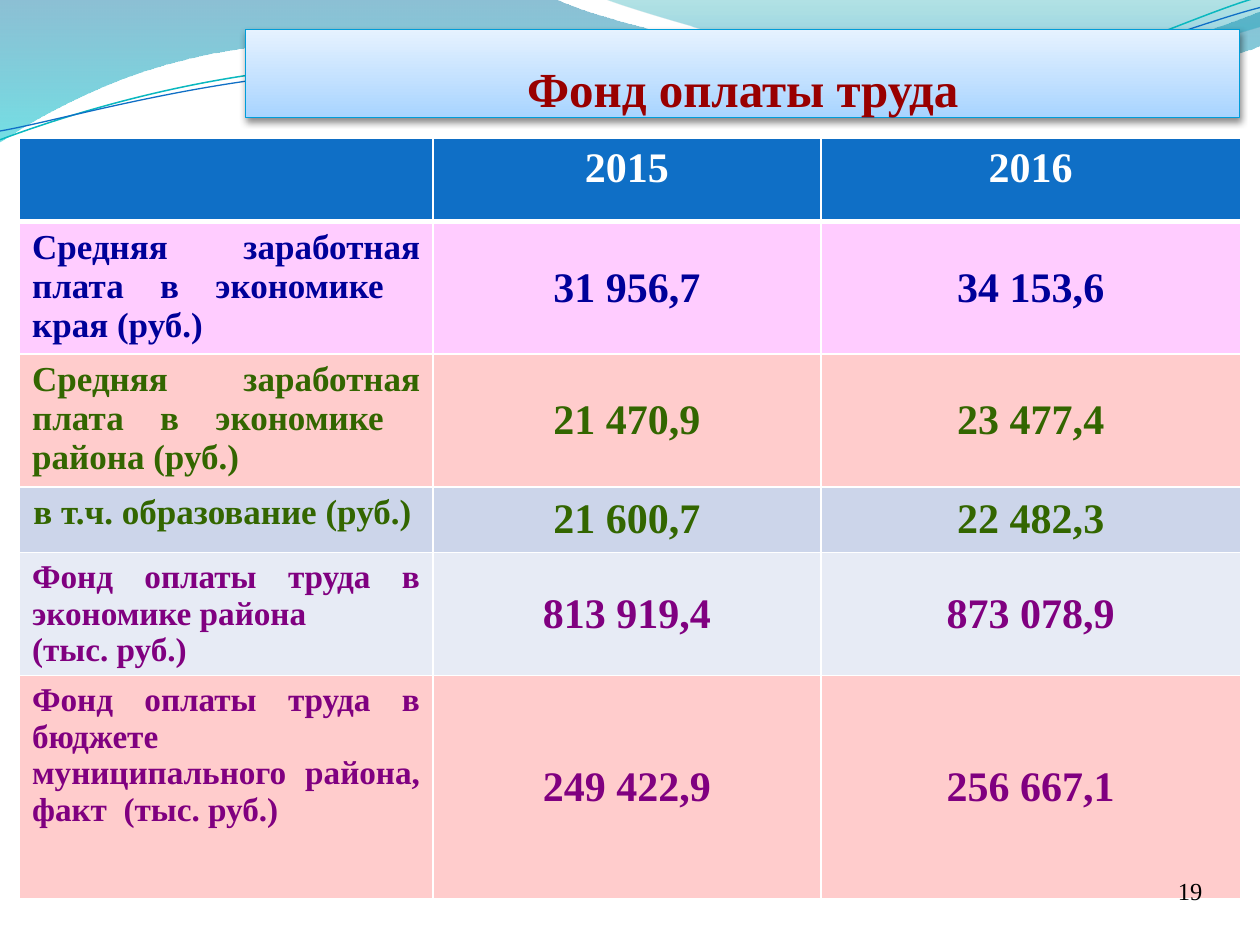
from dataclasses import dataclass

from lxml.etree import SubElement
from pptx import Presentation
from pptx.dml.color import RGBColor
from pptx.enum.text import MSO_ANCHOR as Anchor, PP_ALIGN as Align
from pptx.oxml import parse_xml
from pptx.oxml.ns import nsdecls, qn
from pptx.util import Emu, Inches, Pt


@dataclass(frozen=True)
class Theme:
    font: str = "Times New Roman"
    white: str = "FFFFFF"
    black: str = "000000"
    blue: str = "0F6FC6"
    teal: str = "0AB8BF"
    edge: str = "009DD9"
    red: str = "990000"
    navy: str = "000099"
    green: str = "336600"
    purple: str = "800080"
    lilac: str = "FFCCFF"
    pink: str = "FFCCCC"
    steel: str = "CCD5EA"
    mist: str = "E7EBF5"
    title_size: int = 28
    figure_size: int = 24
    label_size: int = 20
    small_size: int = 19
    number_size: int = 14


THEME = Theme()
COLUMNS, ROWS = 100, 75
COLUMN_WIDTHS = (32.8, 30.8, 33.3)
ROW_HEIGHTS = (6.6, 10.5, 10.55, 5.2, 9.75, 17.75)

UPPER_WAVE = (
    (0, -0.1), ((44, -0.1),),
    ((47.6, 1.7), (66.4, 6.3), (75.8, 6.3)),
    ((85.3, 6.3), (95.8, 2.6), (100, 0.9)),
    ((100.1, 3.6),),
    ((98.3, 4.4), (87, 7.6), (74.6, 7.5)),
    ((62.2, 7.5), (38.2, 2.8), (25.7, 3.4)),
    ((12.9, 3.5), (4.6, 8.3), (-0.1, 11.3)),
)
RIGHT_WAVE = (
    (47.9, -0.1),
    ((50.9, 1.1), (68.2, 6.2), (76.9, 6.5)),
    ((85.6, 6.9), (96.1, 3.2), (100, 2.1)),
    ((100, 0),),
)
TEAL_LINE = (
    (0, 11.1),
    ((4.8, 9.3), (15.8, 5.7), (27.7, 5.2)),
    ((39.5, 4.7), (59.3, 8.9), (71.3, 8)),
    ((83.3, 7.1), (93.8, 1.5), (99.8, -0.2)),
)
BLUE_LINE = (
    (0, 10.4),
    ((4.7, 9.6), (16.4, 6.1), (28.3, 5.6)),
    ((40.3, 5.1), (59.7, 8.3), (71.7, 7.5)),
    ((83.6, 6.7), (94.1, 2.1), (100, 0.6)),
)
ENTRIES = (
    (("Средняя заработная плата в экономике  края (руб.)",),
     "31 956,7", "34 153,6", THEME.lilac, THEME.navy, THEME.label_size, Align.JUSTIFY),
    (("Средняя заработная плата в экономике  района (руб.)",),
     "21 470,9", "23 477,4", THEME.pink, THEME.green, THEME.label_size, Align.JUSTIFY),
    (("в т.ч. образование (руб.) ",),
     "21 600,7", "22 482,3", THEME.steel, THEME.green, THEME.label_size, Align.RIGHT),
    (("Фонд оплаты труда в экономике района", "(тыс. руб.)"),
     "813 919,4", "873 078,9", THEME.mist, THEME.purple, THEME.small_size, Align.JUSTIFY),
    (("Фонд оплаты труда в бюджете муниципального района, факт  (тыс. руб.)",),
     "249 422,9", "256 667,1", THEME.pink, THEME.purple, THEME.small_size, Align.JUSTIFY),
)


def write(frame, *lines, size, color, bold=True, align=Align.LEFT):
    for index, line in enumerate(lines):
        para = frame.add_paragraph() if index else frame.paragraphs[0]
        para.alignment = align
        span = para.add_run()
        span.text = line
        span.font.name = THEME.font
        span.font.size = Pt(size)
        span.font.bold = bold
        span.font.color.rgb = RGBColor.from_string(color)


def bend(shape, segments):
    corners = list(shape._element.iter(qn("a:lnTo")))
    for segment in segments:
        group, corners = corners[:len(segment)], corners[len(segment):]
        if len(group) == 3:
            curve = SubElement(group[0].getparent(), qn("a:cubicBezTo"))
            group[0].addprevious(curve)
            for corner in group:
                curve.append(corner[0])
                corner.getparent().remove(corner)


def shade(shape, *stops):
    shape.fill.background()
    marks = "".join(
        f'<a:gs pos="{place * 1000}"><a:srgbClr val="{color}">'
        f'<a:alpha val="{alpha * 1000}"/></a:srgbClr></a:gs>'
        for place, color, alpha in stops)
    gradient = parse_xml(f'<a:gradFill {nsdecls("a")} rotWithShape="1"><a:gsLst>{marks}'
                         '</a:gsLst><a:lin ang="5400000" scaled="0"/></a:gradFill>')
    properties = shape._element.spPr
    properties.replace(properties.find(qn("a:noFill")), gradient)


def stroke(shape, color, width):
    shape.line.color.rgb = RGBColor.from_string(color)
    shape.line.width = Pt(width)


class Painter:
    def __init__(self, deck, page):
        self.page = page
        self.column = deck.slide_width / COLUMNS
        self.row = deck.slide_height / ROWS

    def area(self, left, top, width, height):
        return (Emu(round(left * self.column)), Emu(round(top * self.row)),
                Emu(round(width * self.column)), Emu(round(height * self.row)))

    def curve(self, outline, close=False):
        start, *segments = outline
        knots = [start] + [knot for segment in segments for knot in segment]
        points = [(round(x * self.column), round(y * self.row)) for x, y in knots]
        builder = self.page.shapes.build_freeform(*points[0])
        builder.add_line_segments(points[1:], close=close)
        shape = builder.convert_to_shape()
        bend(shape, segments)
        shape.shadow.inherit = False
        return shape

    def wave(self, outline, *stops):
        shape = self.curve(outline, close=True)
        shape.line.fill.background()
        shade(shape, *stops)

    def ribbon(self, outline, color, width):
        shape = self.curve(outline)
        shape.fill.background()
        stroke(shape, color, width)

    def title(self, text, *place):
        box = self.page.shapes.title
        box.left, box.top, box.width, box.height = self.area(*place)
        shade(box, (0, "E6F2FF", 100), (100, "A8D4FF", 100))
        stroke(box, THEME.edge, 0.75)
        box._element.spPr.append(parse_xml(
            f'<a:effectLst {nsdecls("a")}><a:outerShdw blurRad="50800" dist="25400" '
            'dir="5400000" rotWithShape="0"><a:srgbClr val="000000"><a:alpha val="45000"/>'
            '</a:srgbClr></a:outerShdw></a:effectLst>'))
        frame = box.text_frame
        frame.vertical_anchor = Anchor.BOTTOM
        frame.margin_left = frame.margin_right = frame.margin_bottom = 0
        write(frame, text, size=THEME.title_size, color=THEME.red, align=Align.CENTER)
        self.page.shapes._spTree.append(box._element)

    def cell(self, cell, fill, base=1):
        properties = cell._tc.get_or_add_tcPr()
        for side, width in (("L", 1), ("R", 1), ("T", 1), ("B", base)):
            properties.append(parse_xml(
                f'<a:ln{side} {nsdecls("a")} w="{Pt(width)}"><a:solidFill>'
                f'<a:srgbClr val="{THEME.white}"/></a:solidFill></a:ln{side}>'))
        cell.fill.solid()
        cell.fill.fore_color.rgb = RGBColor.from_string(fill)

    def table(self, left, top, years, entries):
        place = self.area(left, top, sum(COLUMN_WIDTHS), sum(ROW_HEIGHTS))
        table = self.page.shapes.add_table(len(ROW_HEIGHTS), len(COLUMN_WIDTHS), *place).table
        for column, width in zip(table.columns, COLUMN_WIDTHS):
            column.width = Emu(round(width * self.column))
        for row, height in zip(table.rows, ROW_HEIGHTS):
            row.height = Emu(round(height * self.row))
        for index, cell in enumerate(table.rows[0].cells):
            self.cell(cell, THEME.blue, base=3)
            if index:
                write(cell.text_frame, years[index - 1], size=THEME.figure_size,
                      color=THEME.white, align=Align.CENTER)
        for index, (label, first, second, fill, color, size, align) in enumerate(entries, 1):
            name, *figures = table.rows[index].cells
            self.cell(name, fill)
            write(name.text_frame, *label, size=size, color=color, align=align)
            for cell, figure in zip(figures, (first, second)):
                self.cell(cell, fill)
                cell.vertical_anchor = Anchor.MIDDLE
                write(cell.text_frame, figure, size=THEME.figure_size, color=color,
                      align=Align.CENTER)

    def number(self, text, *place):
        frame = self.page.shapes.add_textbox(*self.area(*place)).text_frame
        frame.word_wrap = True
        write(frame, text, size=THEME.number_size, color=THEME.black, bold=False)


def main():
    deck = Presentation()
    deck.slide_width, deck.slide_height = Inches(10), Inches(7.5)
    page = deck.slides.add_slide(deck.slide_layouts[5])
    painter = Painter(deck, page)
    painter.wave(UPPER_WAVE, (0, "0074A1", 45), (100, "00C6CF", 55))
    painter.wave(RIGHT_WAVE, (0, "00A1A9", 30), (80, "008BBF", 45))
    painter.ribbon(TEAL_LINE, THEME.teal, 0.85)
    painter.ribbon(BLUE_LINE, THEME.blue, 0.75)
    painter.title("Фонд оплаты труда", 19.5, 2.35, 78.9, 7)
    painter.table(1.55, 11, ("2015", "2016"), ENTRIES)
    painter.number("19", 92.5, 69, 4.7, 3.4)
    deck.save("out.pptx")


if __name__ == "__main__":
    main()
